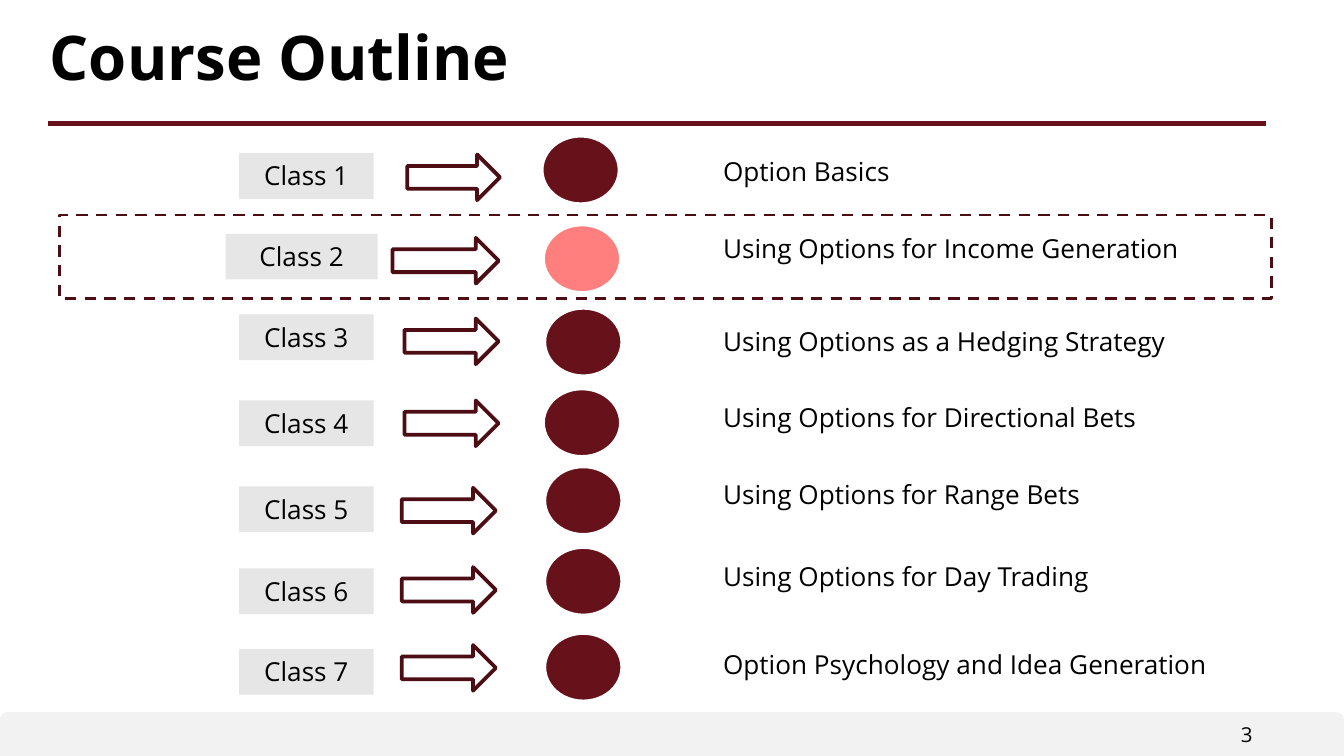
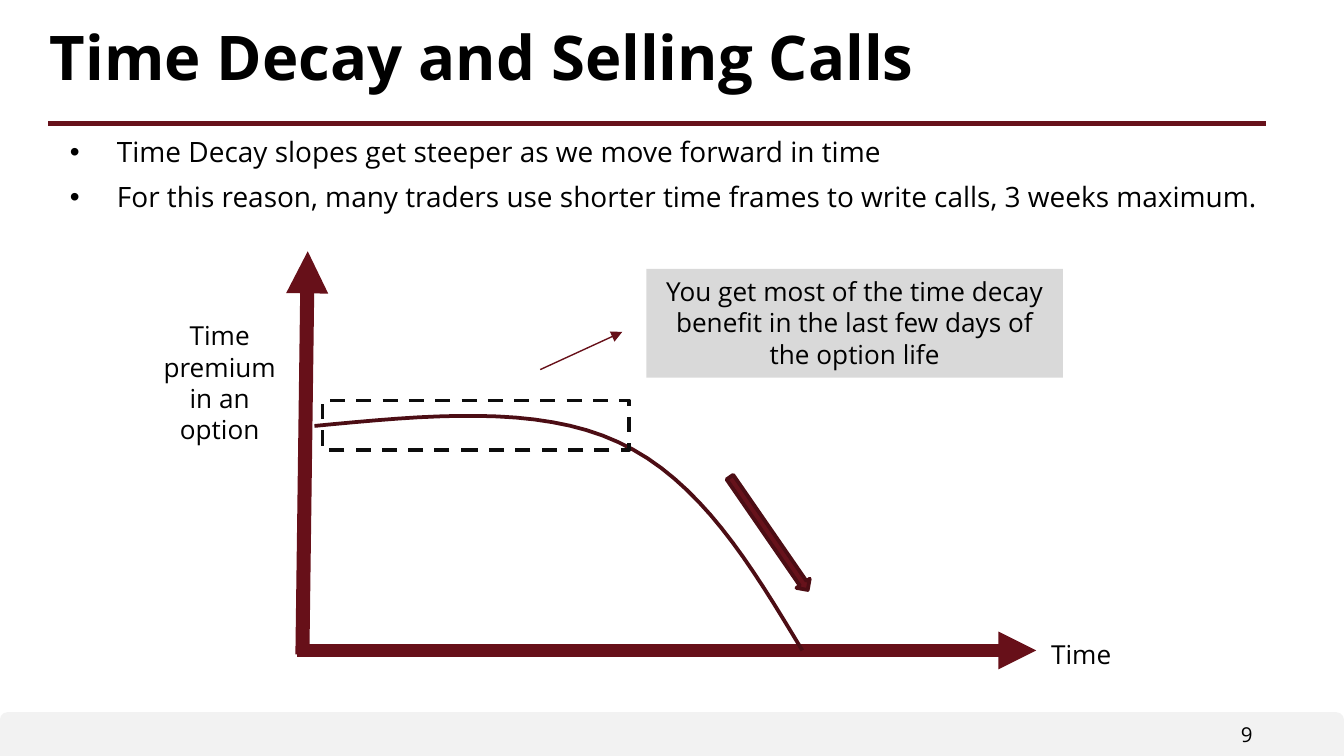
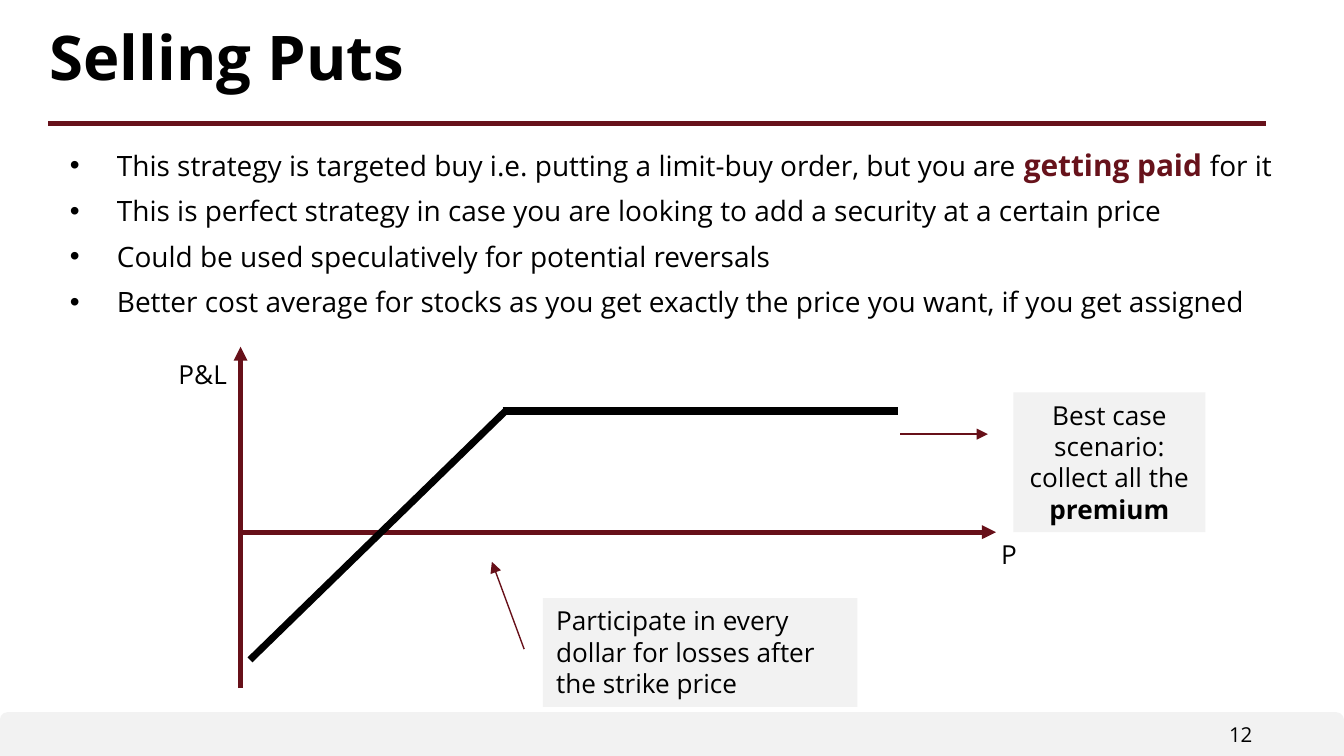
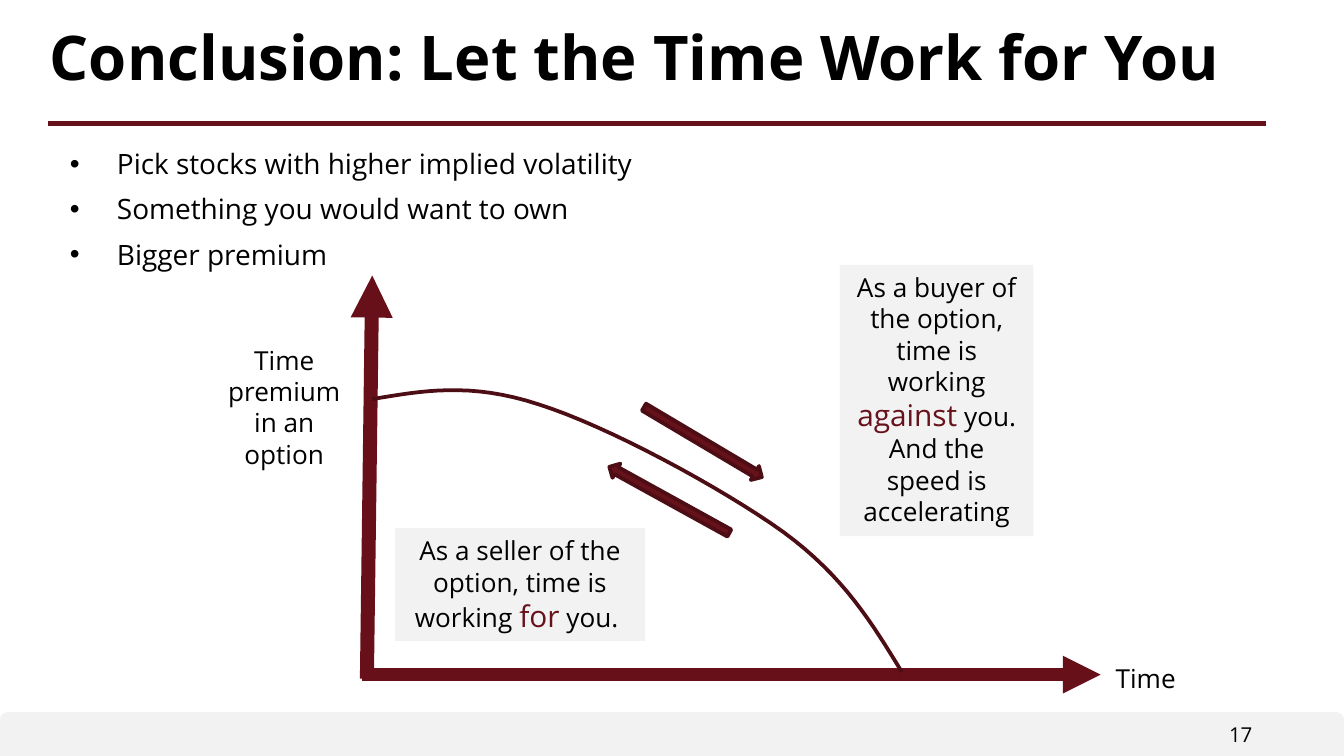
from dataclasses import dataclass
from typing import Optional

from lxml.etree import SubElement
from pptx import Presentation
from pptx.dml.color import RGBColor
from pptx.enum.dml import MSO_LINE_DASH_STYLE as Dash
from pptx.enum.shapes import MSO_CONNECTOR as Connector, MSO_SHAPE as Preset
from pptx.enum.text import MSO_ANCHOR as Anchor, MSO_AUTO_SIZE as AutoSize, PP_ALIGN as Align
from pptx.oxml.ns import qn
from pptx.util import Pt

PX = 9144  # EMU per px, 100 px to the inch
SLIDE_WIDTH = 1000 * PX
SLIDE_HEIGHT = SLIDE_WIDTH * 9 // 16
FONT = "Open Sans"
COLORS = {
    "black": "000000",
    "white": "FFFFFF",
    "maroon": "67121B",
    "axis": "671019",
    "outline": "4C0D14",
    "dashes": "0D0D0D",
    "highlight": "FF0000",
    "band": "F2F2F2",
    "class": "E7E6E6",
    "callout": "D9D9D9",
}
TITLE_LAYOUT, BODY_LAYOUT = 5, 1
BODY_INSETS = (7, 4, 7, 4)
LABEL_INSETS = (10, 5, 10, 5)
TOPIC_INSETS = (0, 3, 0, 3)


@dataclass(frozen=True)
class Box:
    x: int
    y: int
    width: int
    height: int

    def emu(self) -> tuple[int, ...]:
        return tuple(value * PX for value in (self.x, self.y, self.width, self.height))


@dataclass(frozen=True)
class TextStyle:
    """Words between bars in a text take the emphasis size, colour and weight."""
    size: int = 14
    bold: bool = False
    align: Align = Align.LEFT
    spacing: Optional[float] = None
    emphasis_size: int = 16
    emphasis_color: str = "maroon"
    emphasis_bold: bool = False


@dataclass(frozen=True)
class Label:
    box: Box
    lines: tuple[str, ...]
    style: TextStyle = TextStyle()
    fill: Optional[str] = None
    insets: tuple[int, ...] = LABEL_INSETS
    anchor: Anchor = Anchor.TOP


@dataclass(frozen=True)
class Stroke:
    start: tuple[int, int]
    end: tuple[int, int]
    color: str = "axis"
    width: float = 0.75
    arrow: bool = True


@dataclass(frozen=True)
class ClassRow:
    topic: str
    name: Box
    arrow: Box
    circle: tuple[int, int]
    topic_y: int


LEFT = TextStyle()
CENTERED = TextStyle(align=Align.CENTER)
TOPIC = TextStyle(spacing=0.9)
TITLE = TextStyle(size=33, bold=True, spacing=0.9)
BULLET = TextStyle(size=15, spacing=0.9, emphasis_bold=True)
PAGE_NUMBER = TextStyle(size=11, align=Align.RIGHT)
STRONG_END = TextStyle(align=Align.CENTER, emphasis_size=14, emphasis_color="black",
                       emphasis_bold=True)

CLASS_ROWS = (
    ClassRow("Option Basics", Box(178, 114, 100, 34), Box(303, 115, 69, 34), (403, 101), 99),
    ClassRow("Using Options for Income Generation", Box(168, 174, 113, 34),
             Box(292, 177, 79, 34), (404, 167), 156),
    ClassRow("Using Options as a Hedging Strategy", Box(178, 234, 100, 34),
             Box(301, 237, 70, 34), (405, 229), 225),
    ClassRow("Using Options for Directional Bets", Box(178, 298, 100, 34),
             Box(301, 298, 70, 34), (404, 289), 282),
    ClassRow("Using Options for Range Bets", Box(178, 362, 100, 34),
             Box(299, 363, 70, 34), (405, 347), 339),
    ClassRow("Using Options for Day Trading", Box(178, 423, 100, 34),
             Box(299, 422, 70, 34), (405, 407), 400),
    ClassRow("Option Psychology and Idea Generation", Box(178, 483, 100, 34),
             Box(299, 480, 70, 34), (405, 471), 466),
)
CURRENT_CLASS = 2


def rgb(name: str) -> RGBColor:
    return RGBColor.from_string(COLORS[name])


def fill_text(text_frame, lines: tuple[str, ...], style: TextStyle,
              insets: tuple[int, ...], anchor: Anchor = Anchor.TOP) -> None:
    text_frame.word_wrap = True
    text_frame.auto_size = AutoSize.NONE
    text_frame.vertical_anchor = anchor
    (text_frame.margin_left, text_frame.margin_top,
     text_frame.margin_right, text_frame.margin_bottom) = (inset * PX for inset in insets)
    for index, line in enumerate(lines):
        paragraph = text_frame.paragraphs[0] if index == 0 else text_frame.add_paragraph()
        plain, *others = line.split("|")
        paragraph.text = plain
        for part in others:
            paragraph.add_run().text = part
        paragraph.alignment = style.align
        if style.spacing:
            paragraph.line_spacing = style.spacing
        for position, run in enumerate(paragraph.runs):
            emphasized = position % 2 == 1
            run.font.name = FONT
            run.font.size = Pt(style.emphasis_size if emphasized else style.size)
            run.font.bold = style.emphasis_bold if emphasized else style.bold
            run.font.color.rgb = rgb(style.emphasis_color if emphasized else "black")


def add_preset(slide, preset: Preset, box: Box, fill: Optional[str] = None,
               line: Optional[str] = None, width: float = 2, rotation: float = 0):
    shape = slide.shapes.add_shape(preset, *box.emu())
    shape.shadow.inherit = False
    shape.rotation = rotation
    if fill:
        shape.fill.solid()
        shape.fill.fore_color.rgb = rgb(fill)
    else:
        shape.fill.background()
    if line:
        shape.line.color.rgb = rgb(line)
        shape.line.width = Pt(width)
    else:
        shape.line.fill.background()
    return shape


def add_label(slide, label: Label) -> None:
    if label.fill:
        shape = add_preset(slide, Preset.RECTANGLE, label.box, label.fill)
    else:
        shape = slide.shapes.add_textbox(*label.box.emu())
    fill_text(shape.text_frame, label.lines, label.style, label.insets, label.anchor)


def add_stroke(slide, stroke: Stroke) -> None:
    ends = (value * PX for value in (*stroke.start, *stroke.end))
    connector = slide.shapes.add_connector(Connector.STRAIGHT, *ends)
    connector.line.color.rgb = rgb(stroke.color)
    connector.line.width = Pt(stroke.width)
    if stroke.arrow:
        SubElement(connector.get_or_add_ln(), qn("a:tailEnd"), type="triangle")
    SubElement(connector.element.spPr, qn("a:effectLst"))


def add_dashed_frame(slide, box: Box, color: str, width: float) -> None:
    frame = add_preset(slide, Preset.RECTANGLE, box, line=color, width=width)
    frame.line.dash_style = Dash.DASH


def add_slanted_arrow(slide, x: int, y: int, rotation: float) -> None:
    add_preset(slide, Preset.RIGHT_ARROW, Box(x, y, 102, 12), "maroon", "outline",
               rotation=rotation)


def add_curve(slide, knots: tuple[tuple[int, int], ...], steps: int = 16) -> None:
    """Draw joined cubic Beziers: a start, then two controls and an end for each."""
    points = []
    for first in range(0, len(knots) - 1, 3):
        segment = knots[first:first + 4]
        for step in range(1, steps + 1):
            t = step / steps
            weights = ((1 - t) ** 3, 3 * t * (1 - t) ** 2, 3 * t * t * (1 - t), t ** 3)
            points.append(tuple(
                PX * sum(weight * knot[axis] for weight, knot in zip(weights, segment))
                for axis in (0, 1)))
    builder = slide.shapes.build_freeform(knots[0][0] * PX, knots[0][1] * PX)
    builder.add_line_segments(points, close=False)
    curve = builder.convert_to_shape()
    curve.shadow.inherit = False
    curve.fill.background()
    curve.line.color.rgb = rgb("outline")
    curve.line.width = Pt(2)


def place(placeholder, box: Box) -> None:
    placeholder.left, placeholder.top, placeholder.width, placeholder.height = box.emu()


def add_base_slide(presentation, title: str, number: int, layout: int = BODY_LAYOUT):
    """Add a slide with its title, rule, footer band and page number."""
    slide = presentation.slides.add_slide(presentation.slide_layouts[layout])
    add_preset(slide, Preset.ROUND_2_SAME_RECTANGLE, Box(0, 530, 1000, 33), "band")
    add_label(slide, Label(Box(812, 533, 127, 25), (str(number),), PAGE_NUMBER,
                           insets=BODY_INSETS))
    add_stroke(slide, Stroke((36, 92), (942, 92), "maroon", 2.5, arrow=False))
    place(slide.shapes.title, Box(30, 16, 931, 68))
    fill_text(slide.shapes.title.text_frame, (title,), TITLE, BODY_INSETS)
    return slide


def fill_bullets(slide, box: Box, lines: tuple[str, ...]) -> None:
    body = slide.placeholders[1]
    place(body, box)
    fill_text(body.text_frame, lines, BULLET, BODY_INSETS)
    for index, paragraph in enumerate(body.text_frame.paragraphs):
        properties = paragraph._p.get_or_add_pPr()
        properties.set("marL", str(50 * PX))
        properties.set("indent", str(-35 * PX))
        bullet_color = SubElement(properties, qn("a:buClr"))
        SubElement(bullet_color, qn("a:srgbClr"), val=COLORS["black"])
        SubElement(properties, qn("a:buChar"), char="•")
        paragraph.space_before = Pt(8 if index else 0)


def add_decay_axes(slide, dx: int = 0, dy: int = 0) -> None:
    add_stroke(slide, Stroke((225 + dx, 487 + dy), (229 + dx, 187 + dy), width=7.5))
    add_stroke(slide, Stroke((221 + dx, 484 + dy), (771 + dx, 484 + dy), width=6.75))
    add_label(slide, Label(Box(111 + dx, 233 + dy, 105, 104),
                           ("Time premium", "in an option"), CENTERED))
    add_label(slide, Label(Box(759 + dx, 470 + dy, 91, 34), ("Time",), CENTERED))


def build_outline(presentation) -> None:
    slide = add_base_slide(presentation, "Course Outline", 3, TITLE_LAYOUT)
    for number, row in enumerate(CLASS_ROWS, start=1):
        current = number == CURRENT_CLASS
        add_label(slide, Label(row.name, (f"Class {number}",), CENTERED, "class"))
        add_preset(slide, Preset.RIGHT_ARROW, row.arrow, line="outline")
        circle = add_preset(slide, Preset.OVAL, Box(*row.circle, 58, 51),
                            "highlight" if current else "maroon", "white")
        if current:
            fill_color = circle.element.find(".//" + qn("a:srgbClr"))
            SubElement(fill_color, qn("a:alpha"), val="50000")
        add_label(slide, Label(Box(538, row.topic_y, 371, 60), (row.topic,), TOPIC,
                               insets=TOPIC_INSETS, anchor=Anchor.MIDDLE))
    add_dashed_frame(slide, Box(44, 160, 902, 62), "outline", 1.5)


def build_time_decay(presentation) -> None:
    slide = add_base_slide(presentation, "Time Decay and Selling Calls", 9)
    fill_bullets(slide, Box(30, 99, 931, 404), (
        "Time Decay slopes get steeper as we move forward in time",
        "For this reason, many traders use shorter time frames to write calls, 3 weeks maximum.",
    ))
    add_decay_axes(slide)
    add_slanted_arrow(slide, 521, 391, 55.4)
    add_curve(slide, ((234, 317), (317, 309), (400, 301), (460, 329),
                      (521, 357), (559, 421), (597, 484)))
    add_dashed_frame(slide, Box(240, 298, 228, 37), "dashes", 2)
    add_stroke(slide, Stroke((402, 275), (463, 247)))
    add_label(slide, Label(
        Box(481, 200, 310, 81),
        ("You get most of the time decay benefit in the last few days of the option life",),
        CENTERED, "callout"))


def build_selling_puts(presentation) -> None:
    slide = add_base_slide(presentation, "Selling Puts", 12)
    fill_bullets(slide, Box(30, 108, 931, 404), (
        "This strategy is targeted buy i.e. putting a limit-buy order, but you are "
        "|getting paid |for it",
        "This is perfect strategy in case you are looking to add a security at a certain price",
        "Could be used speculatively for potential reversals",
        "Better cost average for stocks as you get exactly the price you want, "
        "if you get assigned",
    ))
    for stroke in (
        Stroke((179, 396), (741, 396), width=2.5),
        Stroke((179, 512), (179, 258), width=2.5),
        Stroke((374, 306), (668, 306), "black", 4, arrow=False),
        Stroke((377, 305), (186, 491), "black", 3.75, arrow=False),
        Stroke((670, 323), (735, 323)),
        Stroke((390, 483), (366, 418)),
    ):
        add_stroke(slide, stroke)
    for label in (
        Label(Box(735, 396, 92, 34), ("P",)),
        Label(Box(123, 262, 57, 34), ("P&L",)),
        Label(Box(754, 292, 143, 104),
              ("Best case scenario: collect all the |premium",), STRONG_END, "band"),
        Label(Box(404, 445, 234, 81),
              ("Participate in every dollar for losses after the strike price",), LEFT, "band"),
    ):
        add_label(slide, label)


def build_conclusion(presentation) -> None:
    slide = add_base_slide(presentation, "Conclusion: Let the Time Work for You", 17)
    fill_bullets(slide, Box(30, 108, 470, 130), (
        "Pick stocks with higher implied volatility",
        "Something you would want to own",
        "Bigger premium",
    ))
    add_decay_axes(slide, 48, 18)
    add_curve(slide, ((277, 297), (313, 291), (350, 284), (401, 301), (452, 317),
                      (537, 363), (583, 396), (628, 429), (649, 464), (671, 500)))
    add_slanted_arrow(slide, 472, 323, 30.7)
    add_slanted_arrow(slide, 447, 366, 208.9)
    add_label(slide, Label(
        Box(625, 197, 144, 202),
        ("As a buyer of the option, time is working |against| you. "
         "And the speed is accelerating",), CENTERED, "band"))
    add_label(slide, Label(
        Box(294, 393, 186, 84),
        ("As a seller of the option, time is working |for| you. ",), CENTERED, "band"))


def main() -> None:
    presentation = Presentation()
    presentation.slide_width = SLIDE_WIDTH
    presentation.slide_height = SLIDE_HEIGHT
    for build in (build_outline, build_time_decay, build_selling_puts, build_conclusion):
        build(presentation)
    presentation.save("out.pptx")


if __name__ == "__main__":
    main()
